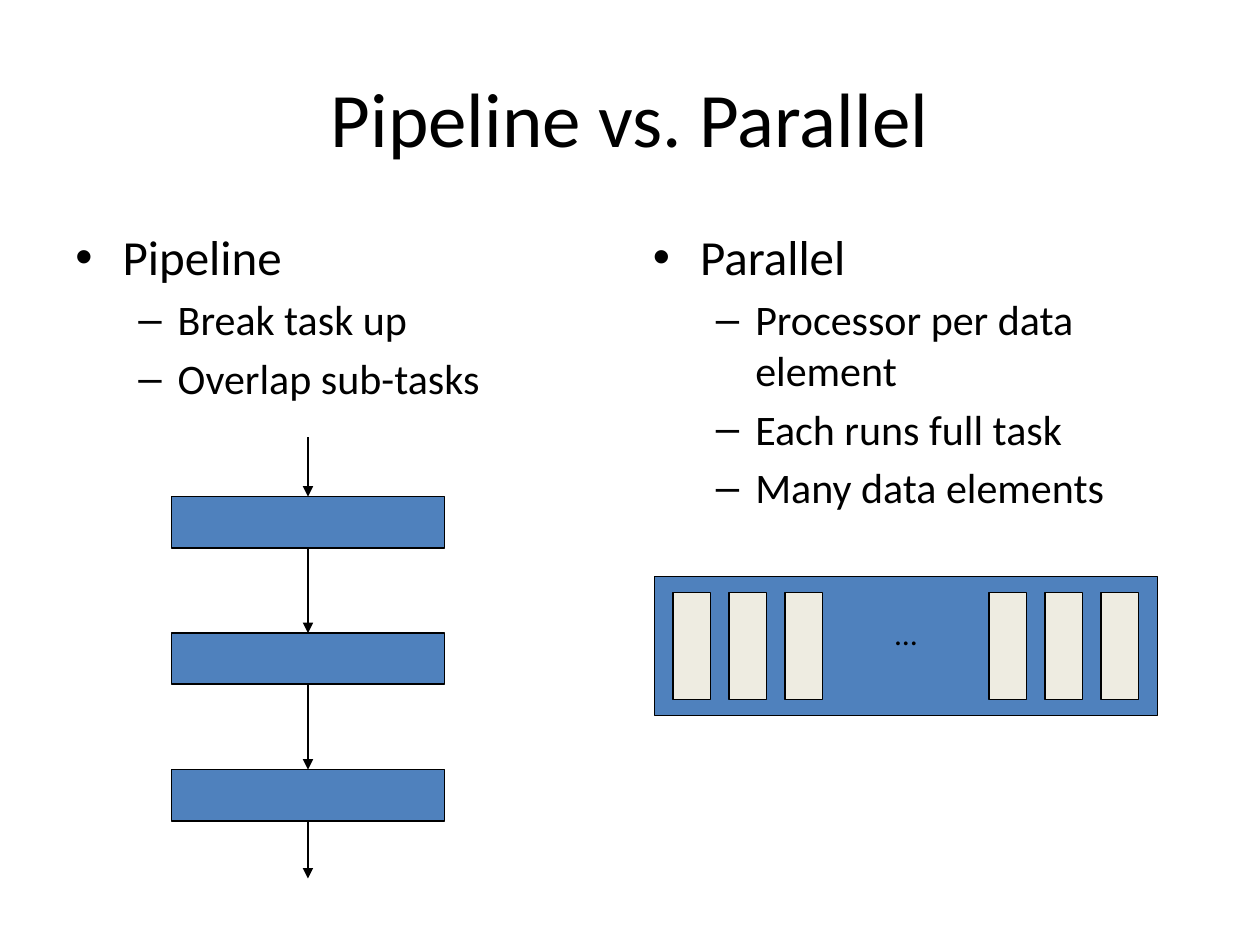
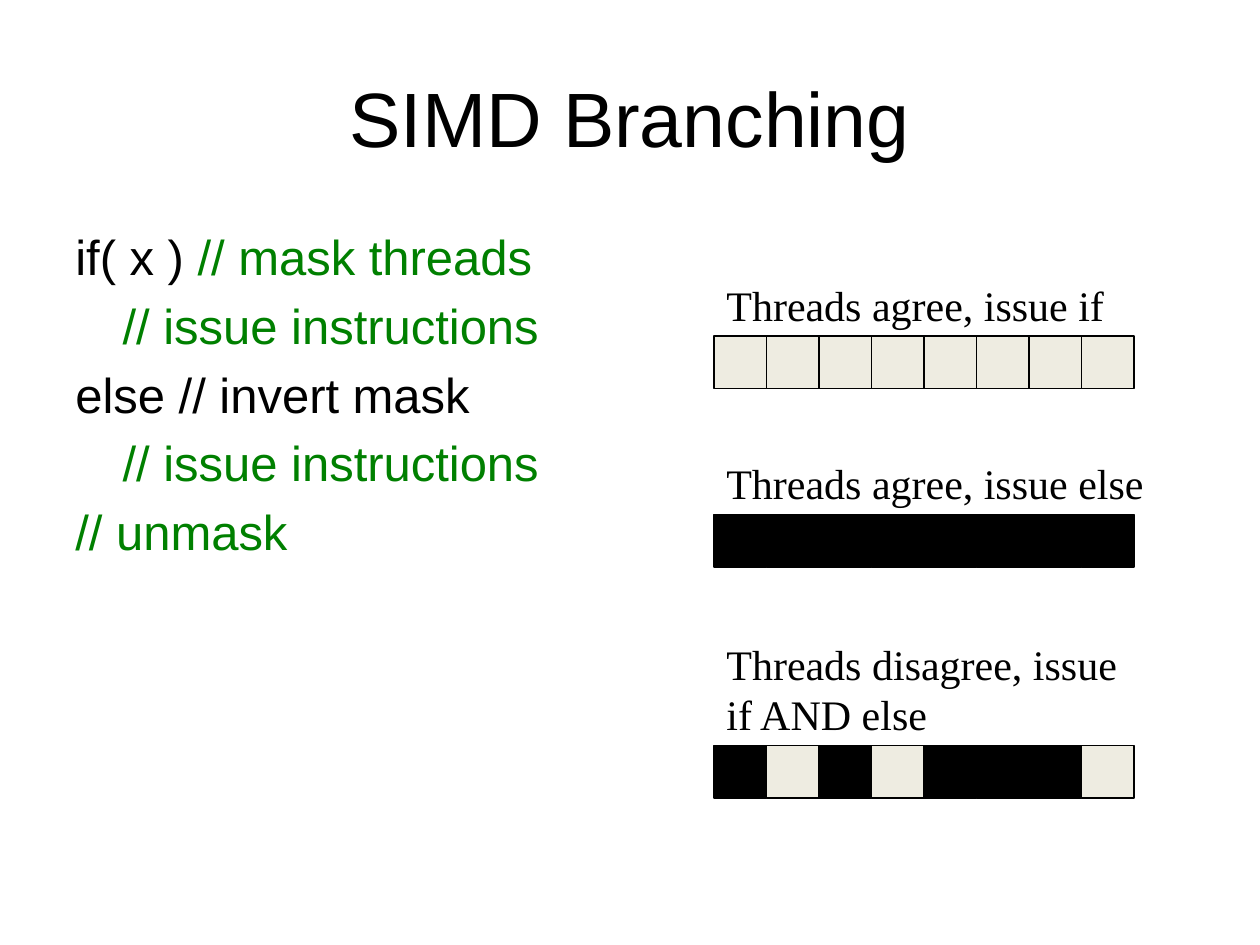
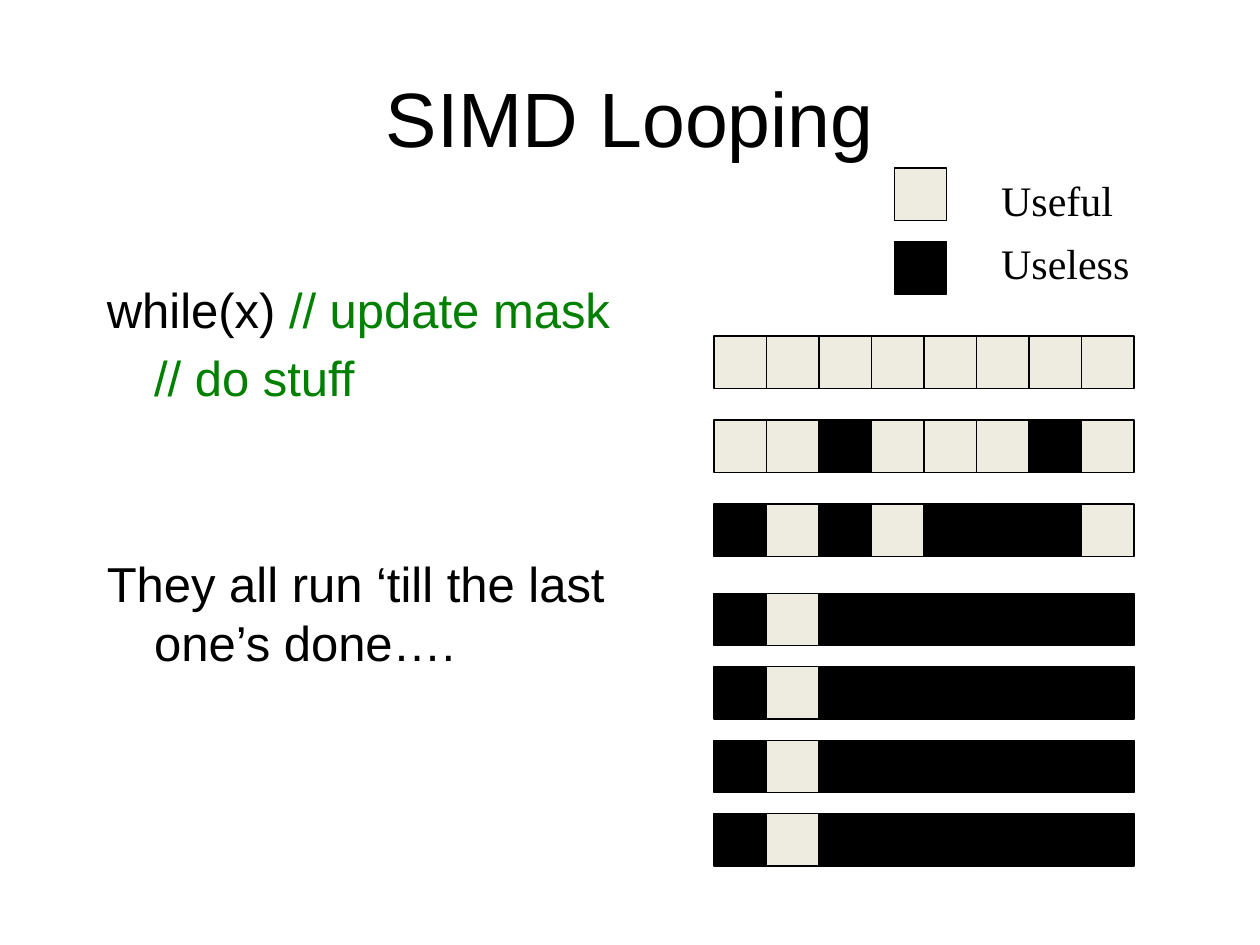
"""Build three slides on pipelines, parallel processors and SIMD control flow."""

from dataclasses import dataclass
from typing import NamedTuple

from lxml.etree import SubElement
from pptx import Presentation
from pptx.dml.color import RGBColor
from pptx.enum.shapes import MSO_CONNECTOR, MSO_SHAPE
from pptx.enum.text import MSO_ANCHOR, PP_ALIGN
from pptx.oxml.ns import qn
from pptx.shapes.autoshape import Shape
from pptx.shapes.connector import Connector
from pptx.slide import Slide
from pptx.text.text import TextFrame
from pptx.util import Pt


@dataclass(frozen=True)
class Theme:
    """Hold the colours, fonts and type sizes of the deck."""

    ink: RGBColor = RGBColor(0, 0, 0)
    blue: RGBColor = RGBColor(0x4F, 0x81, 0xBD)
    cream: RGBColor = RGBColor(0xEE, 0xEC, 0xE1)
    comment: RGBColor = RGBColor(0, 0x80, 0)
    sans: str = "Calibri"
    code: str = "Arial"
    serif: str = "Times New Roman"
    title_size: float = 44
    body_size: float = 28
    detail_size: float = 24
    small_size: float = 18
    thin_line: float = 0.75
    stage_line: float = 1


THEME = Theme()


class Area(NamedTuple):
    """Give a rectangle in points."""

    left: float
    top: float
    width: float
    height: float


class Span(NamedTuple):
    """Give a piece of text and its colour."""

    text: str
    color: RGBColor = THEME.ink


class Line(NamedTuple):
    """Give one paragraph with its indents, bullet, size and gap above."""

    spans: tuple[Span, ...]
    margin: float = 0
    indent: float = 0
    bullet: str = ""
    size: float = THEME.body_size
    gap: float = 0.2 * THEME.body_size


class ThreadRow(NamedTuple):
    """Give the top of a row of threads and its pattern, o active and x masked."""

    top: float
    pattern: str


class Label(NamedTuple):
    """Give a short text and its place."""

    text: str
    area: Area


HANGING = 27
CELL = 30
ROW_LEFT = 408
TITLE_AREA = Area(36, 21.6, 648, 90)
LEFT_COLUMN = Area(36, 126, 318, 356)
RIGHT_COLUMN = Area(366, 126, 318, 356)
LOOP_COLUMN = Area(54, 156, 330, 324)


def heading(text: str) -> Line:
    """Return a first-level bullet."""
    return Line((Span(text),), HANGING, -HANGING, "•")


def detail(text: str) -> Line:
    """Return a second-level bullet."""
    size = THEME.detail_size
    return Line((Span(text),), 58.5, -22.5, "–", size, 0.2 * size)


def code(text: str = "", comment: str = "", **options: float) -> Line:
    """Return a hanging line of code with an optional comment."""
    spans = (Span(text), Span(comment, THEME.comment))
    used = tuple(span for span in spans if span.text)
    return Line(used, HANGING, -HANGING, **options)


def inner_code(comment: str) -> Line:
    """Return a comment indented as the body of a block."""
    return Line((Span(comment, THEME.comment),), HANGING)


def plain(text: str, size: float) -> Line:
    """Return a paragraph without bullet or indent."""
    return Line((Span(text),), size=size)


def write_text(
    frame: TextFrame,
    lines: list[Line],
    *,
    font: str,
    align: PP_ALIGN = PP_ALIGN.LEFT,
    anchor: MSO_ANCHOR = MSO_ANCHOR.TOP,
) -> None:
    """Fill a text frame with formatted paragraphs."""
    frame.word_wrap = True
    frame.vertical_anchor = anchor
    for index, line in enumerate(lines):
        para = frame.add_paragraph() if index else frame.paragraphs[0]
        para.alignment = align
        para.space_before = Pt(line.gap if index else 0)
        properties = para._p.get_or_add_pPr()
        properties.set("marL", str(Pt(line.margin)))
        properties.set("indent", str(Pt(line.indent)))
        if line.bullet:
            SubElement(properties, qn("a:buFont"), typeface=THEME.code)
            SubElement(properties, qn("a:buChar"), char=line.bullet)
        for span in line.spans:
            run = para.add_run()
            run.text = span.text
            run.font.name = font
            run.font.size = Pt(line.size)
            run.font.color.rgb = span.color


def add_text(slide: Slide, area: Area, lines: list[Line], **options) -> None:
    """Add a text box."""
    box = slide.shapes.add_textbox(*map(Pt, area))
    write_text(box.text_frame, lines, **options)


def add_label(slide: Slide, label: Label) -> None:
    """Add a serif label."""
    add_text(slide, label.area, [plain(label.text, THEME.detail_size)], font=THEME.serif)


def add_title_slide(deck: Presentation, title: str, font: str) -> Slide:
    """Add a slide and format its title."""
    slide = deck.slides.add_slide(deck.slide_layouts[5])
    box = slide.shapes.title
    box.left, box.top, box.width, box.height = map(Pt, TITLE_AREA)
    write_text(
        box.text_frame,
        [plain(title, THEME.title_size)],
        font=font,
        align=PP_ALIGN.CENTER,
        anchor=MSO_ANCHOR.MIDDLE,
    )
    return slide


def add_box(
    slide: Slide, area: Area, fill: RGBColor, line_width: float = THEME.thin_line
) -> Shape:
    """Add an outlined rectangle."""
    box = slide.shapes.add_shape(MSO_SHAPE.RECTANGLE, *map(Pt, area))
    box.shadow.inherit = False
    box.fill.solid()
    box.fill.fore_color.rgb = fill
    box.line.color.rgb = THEME.ink
    box.line.width = Pt(line_width)
    return box


def add_arrow(slide: Slide, x: float, start: float, end: float) -> Connector:
    """Add a downward arrow."""
    arrow = slide.shapes.add_connector(
        MSO_CONNECTOR.STRAIGHT, Pt(x), Pt(start), Pt(x), Pt(end)
    )
    arrow.line.color.rgb = THEME.ink
    arrow.line.width = Pt(THEME.thin_line)
    SubElement(arrow.line._get_or_add_ln(), qn("a:tailEnd"), type="triangle")
    SubElement(arrow._element.spPr, qn("a:effectLst"))
    return arrow


def add_cell(slide: Slide, left: float, top: float, state: str) -> None:
    """Add the square of one thread."""
    fill = THEME.cream if state == "o" else THEME.ink
    add_box(slide, Area(left, top, CELL, CELL), fill)


def add_thread_row(slide: Slide, row: ThreadRow) -> None:
    """Add a row of adjoining thread squares."""
    for index, state in enumerate(row.pattern):
        add_cell(slide, ROW_LEFT + index * CELL, row.top, state)


def add_pipeline(slide: Slide) -> None:
    """Add three stages joined by arrows."""
    left, top, width, height, pitch = 98, 283.8, 156, 29.2, 78
    tops = [top + index * pitch for index in range(3)]
    stages = [
        add_box(slide, Area(left, stage_top, width, height), THEME.blue, THEME.stage_line)
        for stage_top in tops
    ]
    starts = [250, *(stage_top + height for stage_top in tops)]
    sources = [None, *stages]
    targets = [*stages, None]
    for start, end, source, target in zip(starts, [*tops, 502], sources, targets):
        arrow = add_arrow(slide, left + width / 2, start, end)
        if source:
            arrow.begin_connect(source, 2)
        if target:
            arrow.end_connect(target, 0)


def add_processor_array(slide: Slide) -> None:
    """Add a panel with two sets of processors and an ellipsis between them."""
    add_box(slide, Area(374.2, 329.6, 287.2, 79.2), THEME.blue)
    for set_left in (384.6, 565.2):
        for index in range(3):
            add_box(slide, Area(set_left + 32 * index, 338.4, 21.6, 61.4), THEME.cream)
    add_text(
        slide,
        Area(374.2, 335.6, 287.2, 52.6),
        [plain("…", THEME.small_size)],
        font=THEME.sans,
        align=PP_ALIGN.CENTER,
        anchor=MSO_ANCHOR.MIDDLE,
    )


def build_comparison(deck: Presentation) -> None:
    """Build the slide that compares pipeline and parallel."""
    slide = add_title_slide(deck, "Pipeline vs. Parallel", THEME.sans)
    pipeline = [heading("Pipeline"), detail("Break task up"), detail("Overlap sub-tasks")]
    parallel = [
        heading("Parallel"),
        detail("Processor per data element"),
        detail("Each runs full task"),
        detail("Many data elements"),
    ]
    add_text(slide, LEFT_COLUMN, pipeline, font=THEME.sans)
    add_text(slide, RIGHT_COLUMN, parallel, font=THEME.sans)
    add_pipeline(slide)
    add_processor_array(slide)


def build_branching(deck: Presentation) -> None:
    """Build the slide on branching."""
    slide = add_title_slide(deck, "SIMD Branching", THEME.code)
    lines = [
        code("if( x ) ", "// mask threads"),
        inner_code("// issue instructions"),
        code("else // invert mask"),
        inner_code("// issue instructions"),
        code(comment="// unmask"),
    ]
    add_text(slide, LEFT_COLUMN, lines, font=THEME.code)
    cases = [
        (Label("Threads agree, issue if", Area(ROW_LEFT, 156, 240, 36)),
         ThreadRow(192, "oooooooo")),
        (Label("Threads agree, issue else", Area(ROW_LEFT, 258, 282, 36)),
         ThreadRow(294, "xxxxxxxx")),
        (Label("Threads disagree, issue if AND else", Area(ROW_LEFT, 361.4, 240, 64.8)),
         ThreadRow(426, "xoxoxxxo")),
    ]
    for label, row in cases:
        add_thread_row(slide, row)
        add_label(slide, label)


def build_looping(deck: Presentation) -> None:
    """Build the slide on looping."""
    slide = add_title_slide(deck, "SIMD Looping", THEME.code)
    lines = [
        code("while(x) ", "// update mask"),
        inner_code("// do stuff"),
        code("They all run ‘till the last one’s done….", gap=84),
    ]
    add_text(slide, LOOP_COLUMN, lines, font=THEME.code)
    early = ("oooooooo", "ooxoooxo", "xoxoxxxo")
    rows = [ThreadRow(192 + 48 * index, pattern) for index, pattern in enumerate(early)]
    rows += [ThreadRow(339 + 42 * index, "xoxxxxxx") for index in range(4)]
    for row in rows:
        add_thread_row(slide, row)
    for index, (state, name) in enumerate((("o", "Useful"), ("x", "Useless"))):
        add_cell(slide, 511, 96 + 42 * index, state)
        add_label(slide, Label(name, Area(565, 96 + 36 * index, 90, 36)))


def main() -> None:
    """Build and save the deck."""
    deck = Presentation()
    deck.slide_width, deck.slide_height = Pt(720), Pt(540)
    for build in (build_comparison, build_branching, build_looping):
        build(deck)
    deck.save("out.pptx")


if __name__ == "__main__":
    main()
